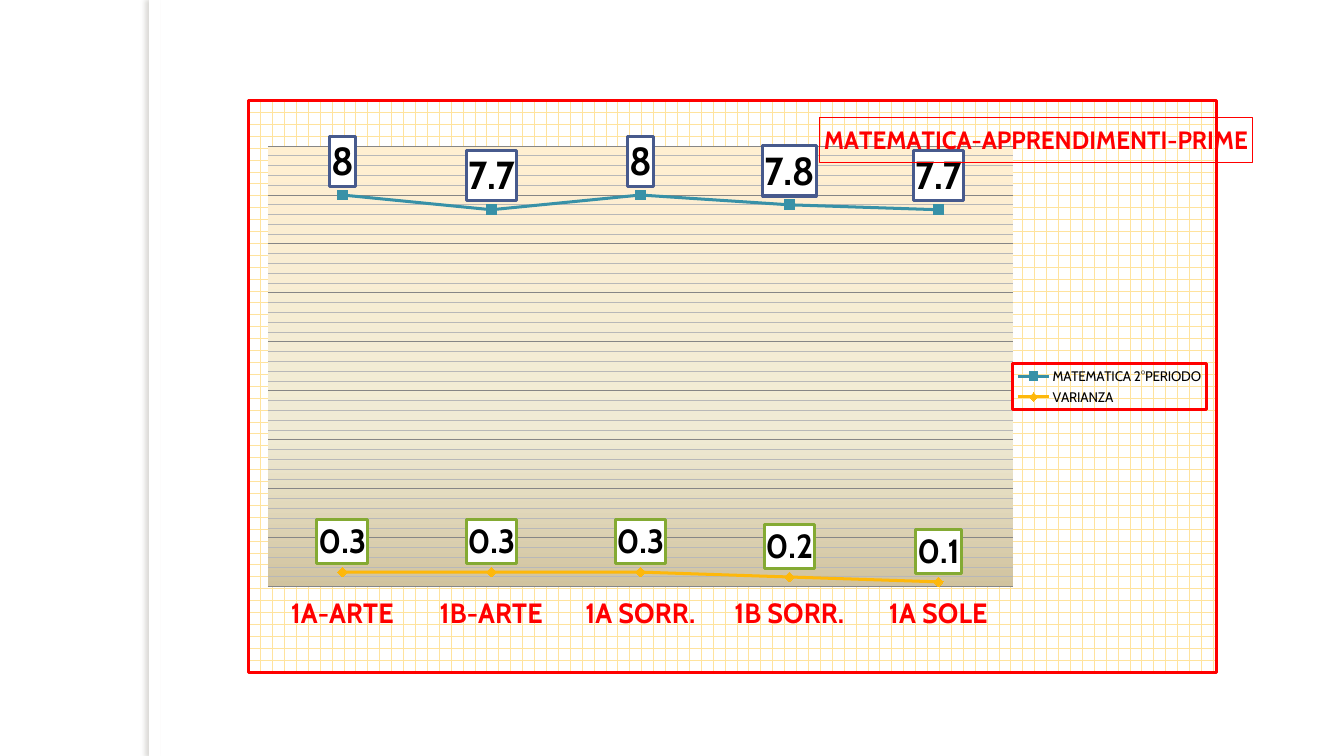
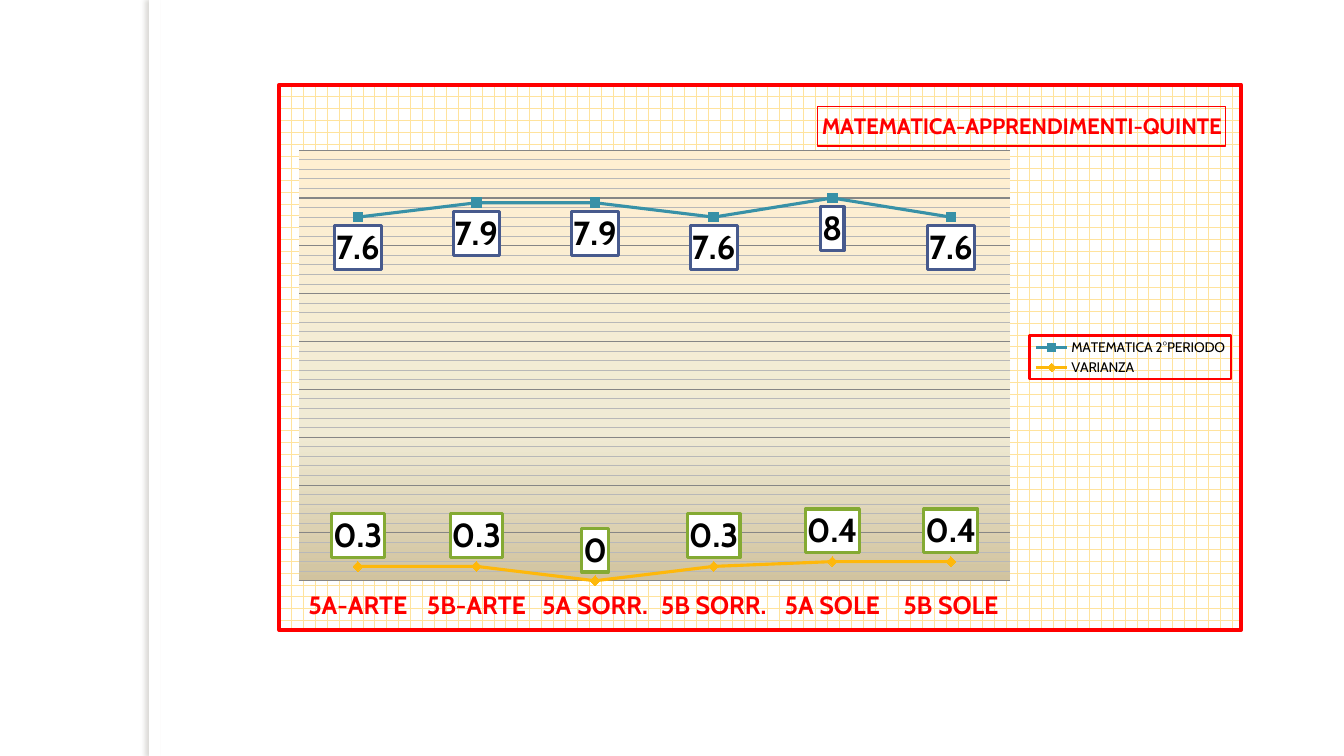
from pptx import Presentation
from pptx.chart.data import CategoryChartData
from pptx.dml.color import RGBColor
from pptx.enum.chart import (XL_CHART_TYPE as ChartType, XL_LABEL_POSITION as LabelPos,
                             XL_LEGEND_POSITION as LegendPos, XL_MARKER_STYLE as Marker,
                             XL_TICK_LABEL_POSITION as TickLabels, XL_TICK_MARK as Tick)
from pptx.enum.shapes import MSO_SHAPE as Preset
from pptx.oxml import parse_xml
from pptx.oxml.ns import nsdecls, qn
from pptx.util import Inches, Pt

THEME = {
    "font": "Cabin", "text": "000000", "accent": "FF0000", "paper": "FFFFFF",
    "brick": "FFE39D", "major": "868686", "minor": "B8B8B8", "shadow": "736F63",
    "plot": [(0, "FFEFD1"), (65, "F0EBD5"), (100, "D1C39F")],
    "small": 10, "label_border": 2.25, "series_line": 2.25, "thin": 0.75,
}
SERIES = [
    {"name": "MATEMATICA 2°PERIODO", "color": "3891A7", "box": "475A8D",
     "marker": Marker.SQUARE, "marker_size": 7},
    {"name": "VARIANZA", "color": "FEB80A", "box": "84AA33",
     "marker": Marker.DIAMOND, "marker_size": 7},
]
# Layouts are shares of the chart: left, top, width, height
SLIDES = [
    {"title": "MATEMATICA-APPRENDIMENTI-PRIME", "at": (2.45, 0.98, 9.98, 5.71),
     "classes": ["1A-ARTE", "1B-ARTE", "1A SORR.", "1B SORR.", "1A SOLE"],
     "values": [(8, 7.7, 8, 7.8, 7.7), (0.3, 0.3, 0.3, 0.2, 0.1)],
     "label_pos": (LabelPos.ABOVE, LabelPos.ABOVE), "label_sizes": (28, 24),
     "title_size": 18, "class_size": 20, "border": 2.25, "legend_border": 2.25,
     "title_at": (0.59, 0.03), "plot_at": (0.02, 0.08, 0.77, 0.77),
     "legend_at": (0.79, 0.46, 0.2, 0.08)},
    {"title": "MATEMATICA-APPRENDIMENTI-QUINTE", "at": (2.75, 0.82, 9.58, 5.45),
     "classes": ["5A-ARTE", "5B-ARTE", "5A SORR.", "5B SORR.", "5A SOLE", "5B SOLE"],
     "values": [(7.6, 7.9, 7.9, 7.6, 8, 7.6), (0.3, 0.3, 0, 0.3, 0.4, 0.4)],
     "label_pos": (LabelPos.BELOW, LabelPos.ABOVE), "label_sizes": (24, 24),
     "title_size": 16, "class_size": 18, "border": 3, "legend_border": 1.5,
     "title_at": (0.56, 0.04), "plot_at": (0.02, 0.12, 0.74, 0.79),
     "legend_at": (0.78, 0.46, 0.21, 0.08)},
]


def rgb(name):
    return RGBColor.from_string(THEME.get(name, name))


def set_font(font, size, color="text", bold=False):
    font.color.rgb = rgb(color)
    for key, value in {"name": THEME["font"], "size": Pt(size), "bold": bold}.items():
        setattr(font, key, value)


def set_line(line, color, width):
    line.color.rgb = rgb(color)
    line.width = Pt(width)


def color_xml(name):
    return f'<a:srgbClr val="{rgb(name)}"/>'


def solid_xml(color):
    return f"<a:solidFill>{color_xml(color)}</a:solidFill>"


def border_xml(color, width):
    return f'<a:ln w="{Pt(width)}">{solid_xml(color)}</a:ln>'


def area_format(inner):
    """Formatting for chart parts that have no public format object."""
    return parse_xml(f'<c:spPr {nsdecls("c", "a")}>{inner}</c:spPr>')


def format_before_text(element, inner):
    element.find(qn("c:txPr")).addprevious(area_format(inner))


def place(element, shares, inner=False):
    """Set a manual layout, given as shares of the chart."""
    target = '<c:layoutTarget val="inner"/>' if inner else ""
    modes = '<c:xMode val="edge"/><c:yMode val="edge"/>'
    sizes = "".join(f'<c:{key} val="{share}"/>' for key, share in zip("xywh", shares))
    layout = parse_xml(f'<c:layout {nsdecls("c")}><c:manualLayout>{target}{modes}{sizes}'
                       "</c:manualLayout></c:layout>")
    for old in element.findall(qn("c:layout")):
        element.remove(old)
    overlay = element.find(qn("c:overlay"))
    if overlay is None:
        element.insert(0, layout)
    else:
        overlay.addprevious(layout)


def add_master_strip(prs, slide):
    """Put the white strip, with its shadow to the left, on the master."""
    strip = slide.shapes.add_shape(Preset.RECTANGLE, Inches(1.48), 0,
                                   Inches(0.11), prs.slide_height)
    strip.fill.solid()
    strip.fill.fore_color.rgb = rgb("paper")
    strip.line.fill.background()
    shadow_color = f'<a:srgbClr val="{rgb("shadow")}"><a:alpha val="25000"/></a:srgbClr>'
    strip._element.spPr.append(parse_xml(
        f'<a:effectLst {nsdecls("a")}><a:outerShdw blurRad="{Pt(3)}" dist="{Pt(3)}" '
        f'dir="10800000" algn="tl" rotWithShape="0">{shadow_color}</a:outerShdw></a:effectLst>'))
    prs.slide_master.shapes._spTree.append(strip._element)


def format_title(chart, content):
    title = chart.chart_title
    title.include_in_layout = False
    run = title.text_frame.paragraphs[0].add_run()
    run.text = content["title"]
    set_font(run.font, content["title_size"], "accent", True)
    set_line(title.format.line, "accent", THEME["thin"])
    # The title always has an overlay element, so its layout follows the text
    title_part = title._element
    if title_part.find(qn("c:overlay")) is None:
        title_part.find(qn("c:tx")).addnext(parse_xml(f'<c:overlay {nsdecls("c")} val="0"/>'))
    place(title_part, content["title_at"])


def format_legend(chart, content):
    chart.has_legend = True
    legend = chart.legend
    legend.position = LegendPos.RIGHT
    legend.include_in_layout = False
    set_font(legend.font, THEME["small"])
    format_before_text(legend._element, border_xml("accent", content["legend_border"]))
    place(legend._element, content["legend_at"])


def format_axes(chart, content):
    classes, grades = chart.category_axis, chart.value_axis
    classes.major_tick_mark = classes.minor_tick_mark = Tick.NONE
    classes.tick_label_position = TickLabels.LOW
    set_font(classes.tick_labels.font, content["class_size"], "accent", True)
    set_line(classes.format.line, "major", THEME["thin"])
    scale = {"minimum_scale": 0, "maximum_scale": 9, "major_unit": 1, "minor_unit": 0.2,
             "has_major_gridlines": True, "has_minor_gridlines": True, "visible": False}
    for key, value in scale.items():
        setattr(grades, key, value)
    set_line(grades.major_gridlines.format.line, "major", THEME["thin"])
    minor_gridlines = grades._element.find(qn("c:minorGridlines"))
    minor_gridlines.append(area_format(border_xml("minor", THEME["thin"])))


def format_series(series, style, position, size):
    series.smooth = False
    set_line(series.format.line, style["color"], THEME["series_line"])
    marker = series.marker
    marker.style, marker.size = style["marker"], style["marker_size"]
    marker.format.fill.solid()
    marker.format.fill.fore_color.rgb = rgb(style["color"])
    marker.format.line.color.rgb = rgb(style["color"])
    labels = series.data_labels
    labels.show_value = True
    labels.position = position
    set_font(labels.font, size, bold=True)
    format_before_text(labels._element, solid_xml("paper")
                       + border_xml(style["box"], THEME["label_border"]))


def format_areas(chart, content):
    brick = (f'<a:pattFill prst="horzBrick"><a:fgClr>{color_xml("brick")}</a:fgClr>'
             f'<a:bgClr>{color_xml("paper")}</a:bgClr></a:pattFill>')
    format_before_text(chart._chartSpace, brick + border_xml("accent", content["border"]))
    stops = "".join(f'<a:gs pos="{share * 1000}">{color_xml(color)}</a:gs>'
                    for share, color in THEME["plot"])
    plot_area = chart._chartSpace.chart.plotArea
    plot_area.append(area_format(f'<a:gradFill><a:gsLst>{stops}</a:gsLst>'
                                 '<a:lin ang="5400000" scaled="0"/></a:gradFill>'))
    place(plot_area, content["plot_at"], inner=True)


def add_grades_chart(slide, content):
    grades = CategoryChartData()
    grades.categories = content["classes"]
    for style, values in zip(SERIES, content["values"]):
        grades.add_series(style["name"], values)
    chart = slide.shapes.add_chart(ChartType.LINE_MARKERS,
                                   *map(Inches, content["at"]), grades).chart
    set_font(chart.font, THEME["small"])
    plot = chart.plots[0]
    plot.vary_by_categories = False
    format_title(chart, content)
    format_legend(chart, content)
    format_axes(chart, content)
    for parts in zip(plot.series, SERIES, content["label_pos"], content["label_sizes"]):
        format_series(*parts)
    format_areas(chart, content)


def main():
    prs = Presentation()
    prs.slide_width, prs.slide_height = Inches(13.33), Inches(7.5)
    blank = prs.slide_layouts[6]
    for content in SLIDES:
        slide = prs.slides.add_slide(blank)
        add_grades_chart(slide, content)
    add_master_strip(prs, slide)
    prs.save("out.pptx")


if __name__ == "__main__":
    main()
